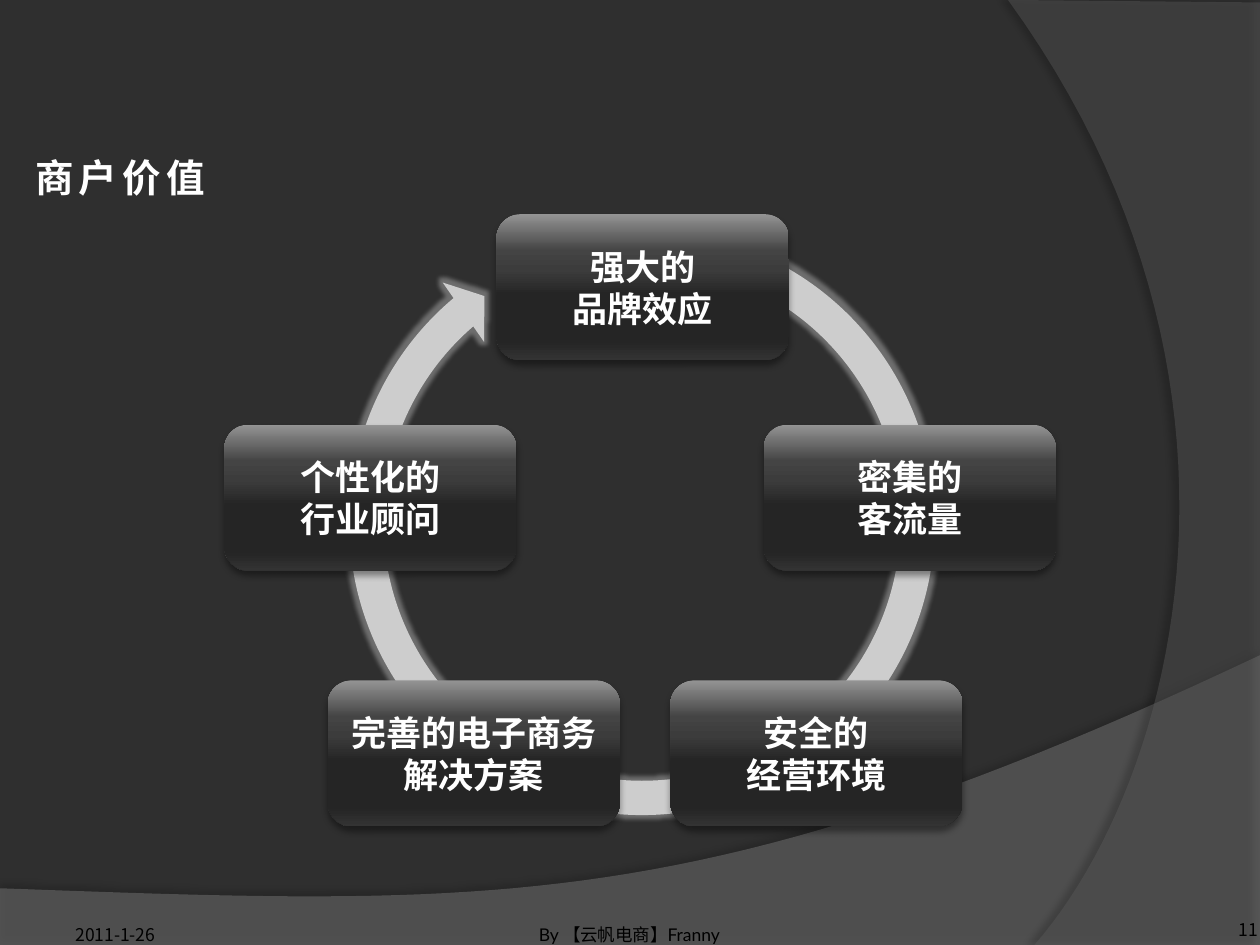
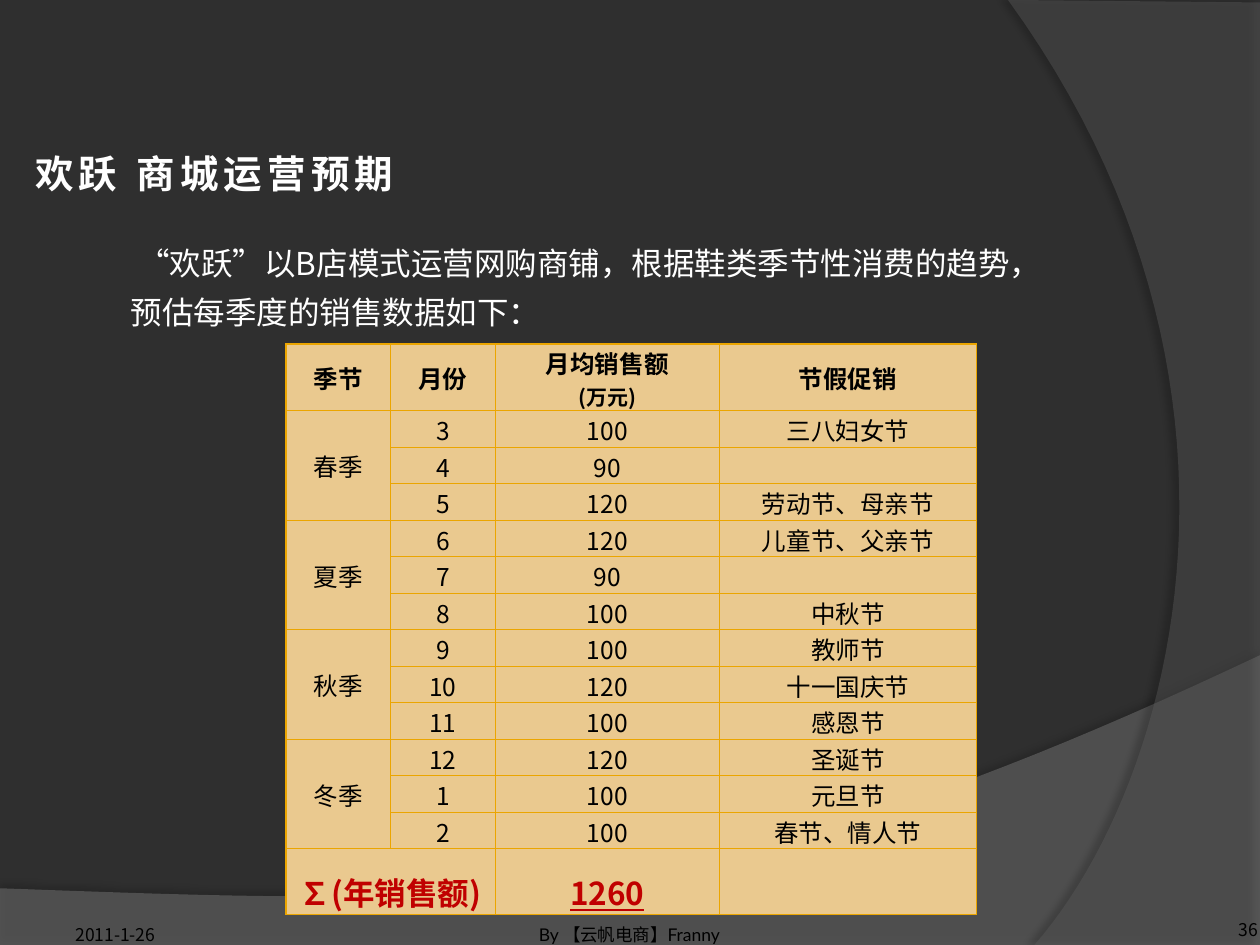
from lxml.etree import SubElement as Sub
from pptx import Presentation
from pptx.dml.color import RGBColor
from pptx.enum.shapes import MSO_SHAPE as Form
from pptx.enum.text import MSO_ANCHOR as Anchor, PP_ALIGN as Align
from pptx.oxml.ns import qn
from pptx.util import Inches, Pt

SANS = "Noto Sans CJK SC"
LATO = "Lato"
WHITE, BLACK, RED = "FFFFFF", "000000", "C00000"
BACK, RING, SAND, GOLD = "2F2F2F", "CDCDCD", "EAC98F", "EBA500"
GLOSS = [(0, "949494"), (25, "444444"), (38, "3C3C3C"), (55, "252525"),
         (80, "252525"), (88, "262626"), (100, "333333")]
SIDES = ["left", "top", "right", "bottom"]


def rgb(code):
    return RGBColor.from_string(code)


def tint(node, code, alpha=100):
    clr = Sub(node, qn("a:srgbClr"), val=code)
    if alpha < 100:
        Sub(clr, qn("a:alpha"), val=str(alpha * 1000))


def write(frame, text, size=10, font=SANS, color=BLACK, bold=False, line=False,
          align=Align.LEFT, anchor=Anchor.MIDDLE, pad=(0.1, 0.05, 0.1, 0.05),
          lead=None, gap=0, dent=0, last=None):
    frame.word_wrap = True
    frame.vertical_anchor = anchor
    for side, inset in zip(SIDES, pad):
        setattr(frame, "margin_" + side, Inches(inset))
    rows = text.split("\n")
    for i, row in enumerate(rows):
        para = frame.paragraphs[0] if i == 0 else frame.add_paragraph()
        para.alignment = align
        if lead:
            para.line_spacing = Pt(lead)
        if dent and i == 0:
            para._p.get_or_add_pPr().set("indent", str(Inches(dent)))
        pts = last if last and i == len(rows) - 1 else size
        if not row:
            Sub(para._p, qn("a:endParaRPr"), sz=str(pts * 100))
            continue
        run = para.add_run()
        run.text = row
        face = run.font
        face.size, face.name, face.bold = Pt(pts), font, bold
        face.underline = line
        face.color.rgb = rgb(color)
        props = run._r.get_or_add_rPr()
        Sub(props, qn("a:ea"), typeface=SANS)
        if gap:
            props.set("spc", str(gap * 100))


def curve(a, b, c, d, count=48):
    steps = [i / count for i in range(1, count + 1)]
    return [tuple((1 - t) ** 3 * p + 3 * (1 - t) ** 2 * t * q
                  + 3 * (1 - t) * t * t * r + t ** 3 * s
                  for p, q, r, s in zip(a, b, c, d)) for t in steps]


class Deck:
    def __init__(self):
        self.file = Presentation()
        self.file.slide_width = Inches(10)
        self.file.slide_height = Inches(7.5)
        self.base = self.file.slide_layouts[5]
        fill = self.base.background.fill
        fill.solid()
        fill.fore_color.rgb = rgb(BACK)
        self.page = None

    def start(self, title, *box):
        self.page = self.file.slides.add_slide(self.base)
        head = self.page.shapes.title
        head.left, head.top, head.width, head.height = map(Inches, box)
        write(head.text_frame, title, size=22, font=LATO, color=WHITE, bold=True,
              pad=(0.05,) * 4, gap=3)

    def plain(self, shape, color=None, alpha=100):
        shape.shadow.inherit = False
        shape.line.fill.background()
        if color:
            shape.fill.solid()
            shape.fill.fore_color.rgb = rgb(color)
            if alpha < 100:
                clr = shape._element.spPr.find(".//" + qn("a:srgbClr"))
                Sub(clr, qn("a:alpha"), val=str(alpha * 1000))

    def shade(self, shape, alpha, blur, dist, angle):
        node = shape._element.spPr.find(qn("a:effectLst"))
        drop = Sub(node, qn("a:outerShdw"), blurRad=str(Pt(blur)), dist=str(Pt(dist)),
                   dir=str(angle * 60000), algn="ctr", rotWithShape="0")
        tint(drop, BLACK, alpha)

    def band(self, points, color, alpha, *drop):
        spots = [(Inches(x), Inches(y)) for x, y in points]
        pen = self.page.shapes.build_freeform(*spots[0], scale=1.0)
        pen.add_line_segments(spots[1:], close=True)
        shape = pen.convert_to_shape()
        self.plain(shape, color, alpha)
        self.shade(shape, *drop)
        self.base.shapes._spTree.append(shape._element)

    def text(self, text, *box, **style):
        shape = self.page.shapes.add_textbox(*map(Inches, box))
        write(shape.text_frame, text, **style)

    def ring(self, adjust, *box):
        shape = self.page.shapes.add_shape(Form.CIRCULAR_ARROW, *map(Inches, box))
        for i, value in enumerate(adjust):
            shape.adjustments[i] = value
        self.plain(shape, RING)
        node = shape._element.spPr.find(qn("a:effectLst"))
        tint(Sub(node, qn("a:glow"), rad=str(Pt(5))), RING, 40)

    def card(self, text, *box):
        shape = self.page.shapes.add_shape(Form.ROUNDED_RECTANGLE, *map(Inches, box))
        self.plain(shape)
        shape.fill.gradient()
        shape.fill.gradient_angle = 270
        stops = shape._element.spPr.find(".//" + qn("a:gsLst"))
        for stop in list(stops):
            stops.remove(stop)
        for spot, color in GLOSS:
            tint(Sub(stops, qn("a:gs"), pos=str(spot * 1000)), color)
        self.shade(shape, 40, 4, 3, 90)
        write(shape.text_frame, text, size=20, color=WHITE, bold=True,
              align=Align.CENTER, pad=(0.08,) * 4, lead=24)

    def cell(self, cell, text, **style):
        write(cell.text_frame, text, align=Align.CENTER, **style)
        for side, inset in zip(SIDES, (0.01, 0.01, 0.01, 0)):
            setattr(cell, "margin_" + side, Inches(inset))
        cell.vertical_anchor = style.get("anchor", Anchor.MIDDLE)
        props = cell._tc.get_or_add_tcPr()
        for side in "LRTB":
            edge = Sub(props, qn("a:ln" + side), w=str(Pt(0.75)))
            tint(Sub(edge, qn("a:solidFill")), GOLD)
        cell.fill.solid()
        cell.fill.fore_color.rgb = rgb(SAND)

    def grid(self, left, top, wide, high):
        size = [sum(wide), sum(high)]
        frame = self.page.shapes.add_table(
            len(high), len(wide), *map(Inches, [left, top] + size))
        table = frame.table
        table.first_row = table.horz_banding = False
        for col, width in zip(table.columns, wide):
            col.width = Inches(width)
        for row, height in zip(table.rows, high):
            row.height = Inches(height)
        return table

    def foot(self, number):
        self.text(number, 9.61, 7.18, 0.47, 0.4, align=Align.RIGHT)
        self.text("2011-1-26", 0.5, 7.02, 2.31, 0.48, anchor=Anchor.BOTTOM,
                  pad=(0.1, 0.05, 0.1, 0))
        self.text("By 【云帆电商】Franny", 3.42, 7.02, 3.15, 0.48, font=LATO,
                  align=Align.CENTER, anchor=Anchor.BOTTOM, pad=(0, 0.05, 0, 0))


def bands(deck):
    wave = curve((10, 5.2), (5.59, 7.29), (3.91, 7.19), (0, 7.05))
    deck.band([(0, 7.51), (10, 7.51), (10, 5.2)] + wave, "7F7F7F", 45, 35, 4, 3.5, 270)
    arc = curve((8.21, 7.5), (9.35, 6.19), (10.18, 3), (8, 0))
    deck.band([(10, 0.02), (10, 7.5), (8.21, 7.5)] + arc, "5E5E5E", 40, 45, 4, 4, 180)


def value(deck):
    deck.start("商户价值", 0.23, 0.78, 8.17, 1.25)
    bands(deck)
    deck.ring((0.055, 3.307, 137.778, 173.848, 0.058), 2.62, 1.67, 4.95, 4.95)
    cards = [("强大的\n品牌效应", 3.94, 1.7), ("密集的\n客流量", 6.06, 3.37),
             ("安全的\n经营环境", 5.32, 5.4), ("完善的电子商务解决方案", 2.6, 5.4),
             ("个性化的\n行业顾问", 1.78, 3.37)]
    for text, left, top in cards:
        deck.card(text, left, top, 2.32, 1.16)
    deck.foot("11")


def sales(deck):
    deck.start("欢跃 商城运营预期", 0.23, 1.03, 4.14, 0.69)
    deck.text("“欢跃”以B店模式运营网购商铺，根据鞋类季节性消费的趋势，\n"
              "预估每季度的销售数据如下：", 0.94, 1.8, 8.13, 0.85,
              size=18, color=WHITE, anchor=Anchor.TOP, lead=28, dent=0.06)
    heads = ["季节", "月份", "月均销售额\n(万元)", "节假促销"]
    months = [(100, "三八妇女节"), (90, ""), (120, "劳动节、母亲节"),
              (120, "儿童节、父亲节"), (90, ""), (100, "中秋节"),
              (100, "教师节"), (120, "十一国庆节"), (100, "感恩节"),
              (120, "圣诞节"), (100, "元旦节"), (100, "春节、情人节")]
    table = deck.grid(2.27, 2.73, [0.83, 0.83, 1.78, 2.04],
                      [0.53] + [0.29] * len(months) + [0.52])
    for col, text in enumerate(heads):
        deck.cell(table.cell(0, col), text, size=14, bold=True,
                  last=12 if "\n" in text else None)
    for i, (amount, feast) in enumerate(months):
        row = i + 1
        season = "春夏秋冬"[i // 3] + "季" if i % 3 == 0 else ""
        deck.cell(table.cell(row, 0), season, size=14)
        for col, text in enumerate([str((i + 2) % 12 + 1), str(amount), feast], 1):
            deck.cell(table.cell(row, col), text, size=14, anchor=Anchor.BOTTOM)
        if season:
            table.cell(row, 0).merge(table.cell(row + 2, 0))
    end = len(months) + 1
    total = sum(amount for amount, feast in months)
    for col, text in enumerate(["∑(年销售额)", "", str(total), ""]):
        deck.cell(table.cell(end, col), text, size=18, color=RED, bold=True,
                  line=col == 2, anchor=Anchor.BOTTOM)
    table.cell(end, 0).merge(table.cell(end, 1))
    deck.foot("36")


def main():
    deck = Deck()
    value(deck)
    sales(deck)
    deck.file.save("out.pptx")


if __name__ == "__main__":
    main()
